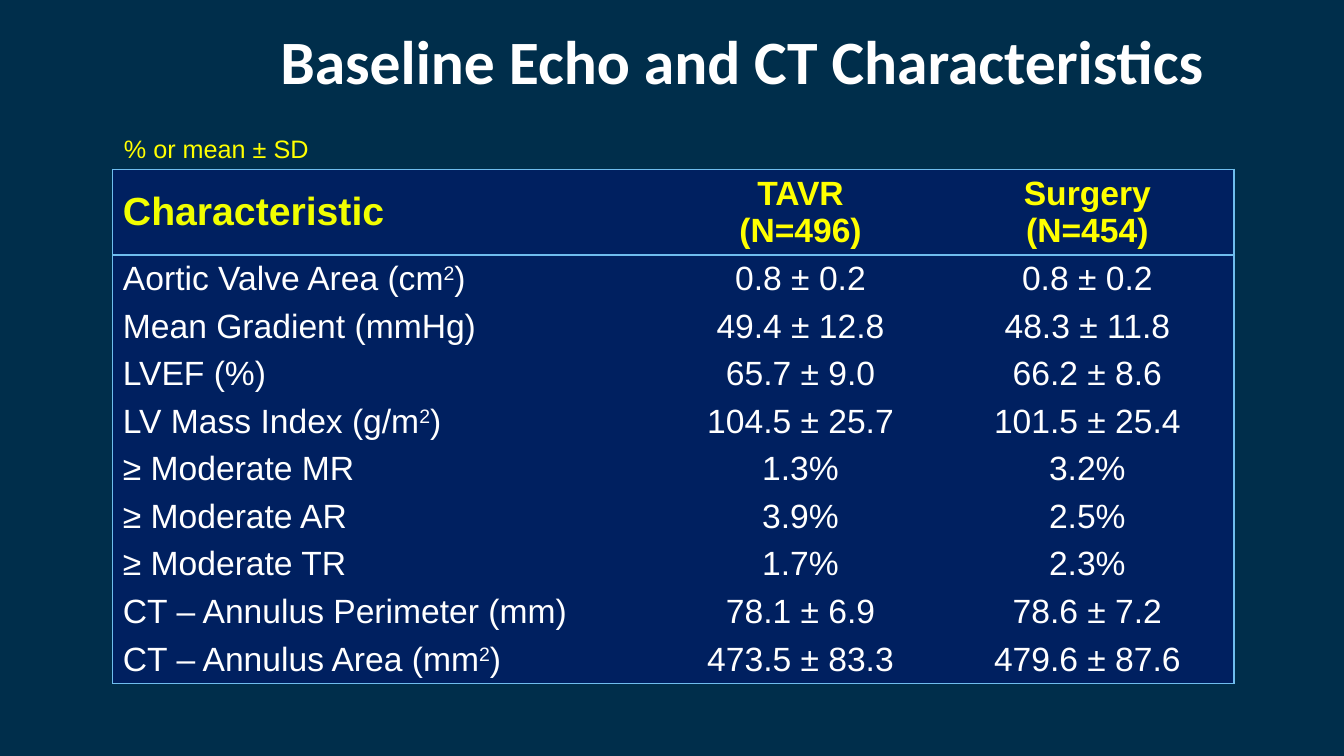
from lxml.etree import SubElement
from pptx import Presentation
from pptx.dml.color import RGBColor
from pptx.enum.text import MSO_ANCHOR, PP_ALIGN
from pptx.oxml.ns import qn
from pptx.util import Inches, Pt

COLORS = {
    "background": "002E4B",
    "panel": "002060",
    "rule": "6FBDEE",
    "white": "FFFFFF",
    "yellow": "FFFF00",
    "lime": "F1FE00",
}
WIDTH, HEIGHT = Inches(13.33), Inches(7.5)
COLUMN_WEIGHTS = (5.43, 2.78, 2.91)
HEADER_ROWS = 1.8
HEADINGS = ("Characteristic", "TAVR\n(N=496)", "Surgery\n(N=454)")
MEASURES = (
    ("Aortic Valve Area (cm^2^)", "0.8 ± 0.2", "0.8 ± 0.2"),
    ("Mean Gradient (mmHg)", "49.4 ± 12.8", "48.3 ± 11.8"),
    ("LVEF (%)", "65.7 ± 9.0", "66.2 ± 8.6"),
    ("LV Mass Index (g/m^2^)", "104.5 ± 25.7", "101.5 ± 25.4"),
    ("≥ Moderate MR", "1.3%", "3.2%"),
    ("≥ Moderate AR", "3.9%", "2.5%"),
    ("≥ Moderate TR", "1.7%", "2.3%"),
    ("CT – Annulus Perimeter (mm)", "78.1 ± 6.9", "78.6 ± 7.2"),
    ("CT – Annulus Area (mm^2^)", "473.5 ± 83.3", "479.6 ± 87.6"),
)


def color(name):
    return RGBColor.from_string(COLORS[name])


def percent_box(left, top, width, height):
    return (int(WIDTH * left / 100), int(HEIGHT * top / 100),
            int(WIDTH * width / 100), int(HEIGHT * height / 100))


def write(frame, text, size=24, font="Arial", ink="white", bold=False,
          align=PP_ALIGN.LEFT):
    for index, line in enumerate(text.split("\n")):
        paragraph = frame.paragraphs[0] if index == 0 else frame.add_paragraph()
        paragraph.alignment = align
        for part, words in enumerate(line.split("^")):
            run = paragraph.add_run()
            run.text = words
            run.font.size = Pt(size)
            run.font.name = font
            run.font.bold = bold
            run.font.color.rgb = color(ink)
            if part % 2:
                run._r.get_or_add_rPr().set("baseline", "30000")


def set_borders(cell, ruled_sides):
    properties = cell._tc.get_or_add_tcPr()
    for side in "LRTB":
        line = SubElement(properties, qn(f"a:ln{side}"), w=str(Pt(1)))
        if side in ruled_sides:
            fill = SubElement(line, qn("a:solidFill"))
            SubElement(fill, qn("a:srgbClr"), val=COLORS["rule"])
        else:
            SubElement(line, qn("a:noFill"))


def format_cell(cell, ruled_sides):
    set_borders(cell, ruled_sides)
    cell.fill.solid()
    cell.fill.fore_color.rgb = color("panel")
    cell.vertical_anchor = MSO_ANCHOR.MIDDLE
    cell.margin_left = cell.margin_right = Inches(0.1)
    cell.margin_top = cell.margin_bottom = Inches(0.04)


def place_title(slide, box):
    title = slide.shapes.title
    title.left, title.top, title.width, title.height = box
    frame = title.text_frame
    frame.word_wrap = True
    frame.vertical_anchor = MSO_ANCHOR.MIDDLE
    frame.margin_left = frame.margin_right = Inches(0.05)
    frame.margin_top = frame.margin_bottom = Inches(0.05)
    write(frame, "Baseline Echo and CT Characteristics", size=44,
          font="Calibri", bold=True, align=PP_ALIGN.CENTER)


def place_unit_note(slide, box):
    note = slide.shapes.add_textbox(*box).text_frame
    note.word_wrap = False
    write(note, "% or mean ± SD", size=18, ink="yellow")


def place_characteristics(slide, box):
    left, top, width, height = box
    rows = (HEADINGS, *MEASURES)
    table = slide.shapes.add_table(len(rows), len(HEADINGS), *box).table
    table.first_row = table.horz_banding = False
    for column, weight in zip(table.columns, COLUMN_WEIGHTS):
        column.width = int(width * weight / sum(COLUMN_WEIGHTS))
    row_height = height / (HEADER_ROWS + len(MEASURES))
    last_row, last_column = len(rows) - 1, len(HEADINGS) - 1
    for r, values in enumerate(rows):
        header = r == 0
        table.rows[r].height = int(row_height * (HEADER_ROWS if header else 1))
        for c, value in enumerate(values):
            label = c == 0
            sides = "L" * label + "R" * (c == last_column)
            sides += "T" * (r <= 1) + "B" * (r in (0, last_row))
            cell = table.cell(r, c)
            format_cell(cell, sides)
            heading_ink = "lime" if label else "yellow"
            write(cell.text_frame, value, size=28 if header and label else 24,
                  ink=heading_ink if header else "white", bold=header,
                  align=PP_ALIGN.LEFT if label else PP_ALIGN.CENTER)


def main():
    deck = Presentation()
    deck.slide_width, deck.slide_height = WIDTH, HEIGHT
    slide = deck.slides.add_slide(deck.slide_layouts.get_by_name("Title Only"))
    slide.background.fill.solid()
    slide.background.fill.fore_color.rgb = color("background")
    place_title(slide, percent_box(12.75, 2.4, 85, 11.07))
    place_characteristics(slide, percent_box(8.4, 22.4, 83.42, 68))
    place_unit_note(slide, percent_box(8.48, 16.93, 15.38, 5.33))
    deck.save("out.pptx")


if __name__ == "__main__":
    main()
